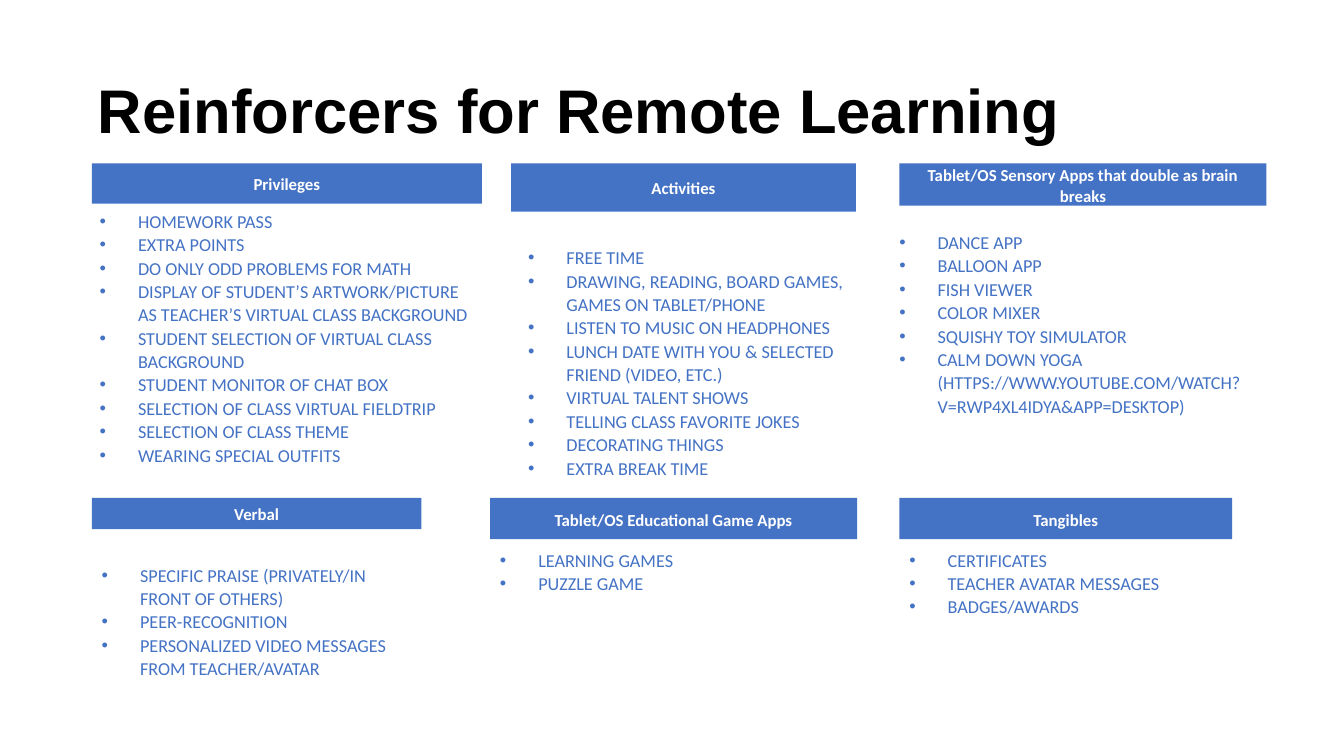
from pptx import Presentation, util as u
from pptx.dml import color
from pptx.enum import shapes, text
from lxml import etree

HUES = {"blue": "4472C4", "white": "FFFFFF", "black": "000000"}
WIDE, HIGH = 13.33, 7.5

# Left edges of columns and tops of rows, in percent of the slide
LEFT, MID, MID_IN, RIGHT = 6.83, 36.46, 38.03, 66.92
TOP, LOW = 21.6, 65.87

# Header box, list shift (x, y), list height (all in percent), title, items
PANELS = [
    ((LEFT, TOP, 29.03, 5.33), (-0.15, 4.67), 39.6, "Privileges", [
        "HOMEWORK PASS",
        "EXTRA POINTS",
        "DO ONLY ODD PROBLEMS FOR MATH",
        "DISPLAY OF STUDENT’S ARTWORK/PICTURE AS TEACHER’S VIRTUAL CLASS BACKGROUND",
        "STUDENT SELECTION OF VIRTUAL CLASS BACKGROUND",
        "STUDENT MONITOR OF CHAT BOX",
        "SELECTION OF CLASS VIRTUAL FIELDTRIP",
        "SELECTION OF CLASS THEME",
        "WEARING SPECIAL OUTFITS"]),
    ((MID_IN, TOP, 25.66, 6.4), (0.53, 9.47), 38.4, "Activities", [
        "FREE TIME",
        "DRAWING, READING, BOARD GAMES, GAMES ON TABLET/PHONE",
        "LISTEN TO MUSIC ON HEADPHONES",
        "LUNCH DATE WITH YOU & SELECTED FRIEND (VIDEO, ETC.)",
        "VIRTUAL TALENT SHOWS",
        "TELLING CLASS FAVORITE JOKES",
        "DECORATING THINGS",
        "EXTRA BREAK TIME"]),
    ((LEFT, LOW, 24.53, 4.13), (0, 7.2), 19.07, "Verbal", [
        "SPECIFIC PRAISE (PRIVATELY/IN FRONT OF OTHERS)",
        "PEER-RECOGNITION",
        "PERSONALIZED VIDEO MESSAGES FROM TEACHER/AVATAR"]),
    ((RIGHT, TOP, 27.31, 5.6), (-0.75, 7.47), 28,
     "Tablet/OS Sensory Apps that double as brain breaks", [
        "DANCE APP",
        "BALLOON APP",
        "FISH VIEWER",
        "COLOR MIXER",
        "SQUISHY TOY SIMULATOR",
        "CALM DOWN YOGA (HTTPS://WWW.YOUTUBE.COM/WATCH?V=RWP4XL4IDYA&APP=DESKTOP)"]),
    ((MID, LOW, 27.31, 5.47), (0, 5.2), 22.4, "Tablet/OS Educational Game Apps", [
        "LEARNING GAMES",
        "PUZZLE GAME"]),
    ((RIGHT, LOW, 24.76, 5.47), (0, 5.2), 22.4, "Tangibles", [
        "CERTIFICATES",
        "TEACHER AVATAR MESSAGES",
        "BADGES/AWARDS"]),
]


def place(box):
    """Turn percent of the slide into lengths."""
    x, y, w, h = box
    return [u.Inches(share * side / 100) for share, side in
            ((x, WIDE), (y, HIGH), (w, WIDE), (h, HIGH))]


def style(para, size, name, hue, bold=False, lead=1.07):
    font = para.font
    font.size, font.name, font.bold = u.Pt(size), name, bold
    font.color.rgb = color.RGBColor.from_string(HUES[hue])
    para.line_spacing = lead


def inset(frame, *sides):
    frame.word_wrap = True
    (frame.margin_left, frame.margin_top, frame.margin_right,
     frame.margin_bottom) = [u.Inches(side) for side in sides]


def bullet(para):
    props = para._p.get_or_add_pPr()
    props.set("marL", str(u.Inches(0.38)))
    props.set("indent", str(-u.Inches(0.38)))
    ns = "{http://schemas.openxmlformats.org/drawingml/2006/main}"
    etree.SubElement(props, ns + "buFont").set("typeface", "Arial")
    etree.SubElement(props, ns + "buChar").set("char", "•")


def add_title(slide, box):
    frame = slide.shapes.add_textbox(*place(box)).text_frame
    inset(frame, 0.05, 0.05, 0.05, 0.05)
    frame.vertical_anchor = text.MSO_ANCHOR.MIDDLE
    frame.text = "Reinforcers for Remote Learning"
    style(frame.paragraphs[0], 44, "Arial", "black", True, 0.9)


def add_panel(slide, box, shift, tall, head, items):
    group = slide.shapes.add_group_shape().shapes

    # Header bar
    bar = group.add_shape(shapes.MSO_SHAPE.RECTANGLE, *place(box))
    bar.shadow.inherit = False
    bar.fill.solid()
    bar.fill.fore_color.rgb = color.RGBColor.from_string(HUES["blue"])
    bar.line.fill.background()
    frame = bar.text_frame
    inset(frame, 0.1, 0.05, 0.1, 0.05)
    frame.vertical_anchor = text.MSO_ANCHOR.MIDDLE
    frame.text = head
    para = frame.paragraphs[0]
    para.alignment = text.PP_ALIGN.CENTER
    para.space_after = u.Pt(8)
    style(para, 12, "Calibri", "white", True)

    # Bulleted list
    x, y, w, _ = box
    area = (x + shift[0], y + shift[1], w, tall)
    frame = group.add_textbox(*place(area)).text_frame
    inset(frame, 0.1, 0.1, 0.1, 0)
    frame.text = "\n".join(items)
    for para in frame.paragraphs:
        bullet(para)
        style(para, 13, "Calibri", "blue")
    para.space_after = u.Pt(8)


def main():
    deck = Presentation()
    deck.slide_width, deck.slide_height = u.Inches(WIDE), u.Inches(HIGH)
    slide = deck.slides.add_slide(deck.slide_layouts[6])
    add_title(slide, (6.9, 5.33, 86.27, 19.33))
    for panel in PANELS:
        add_panel(slide, *panel)
    deck.save("out.pptx")


if __name__ == "__main__":
    main()
